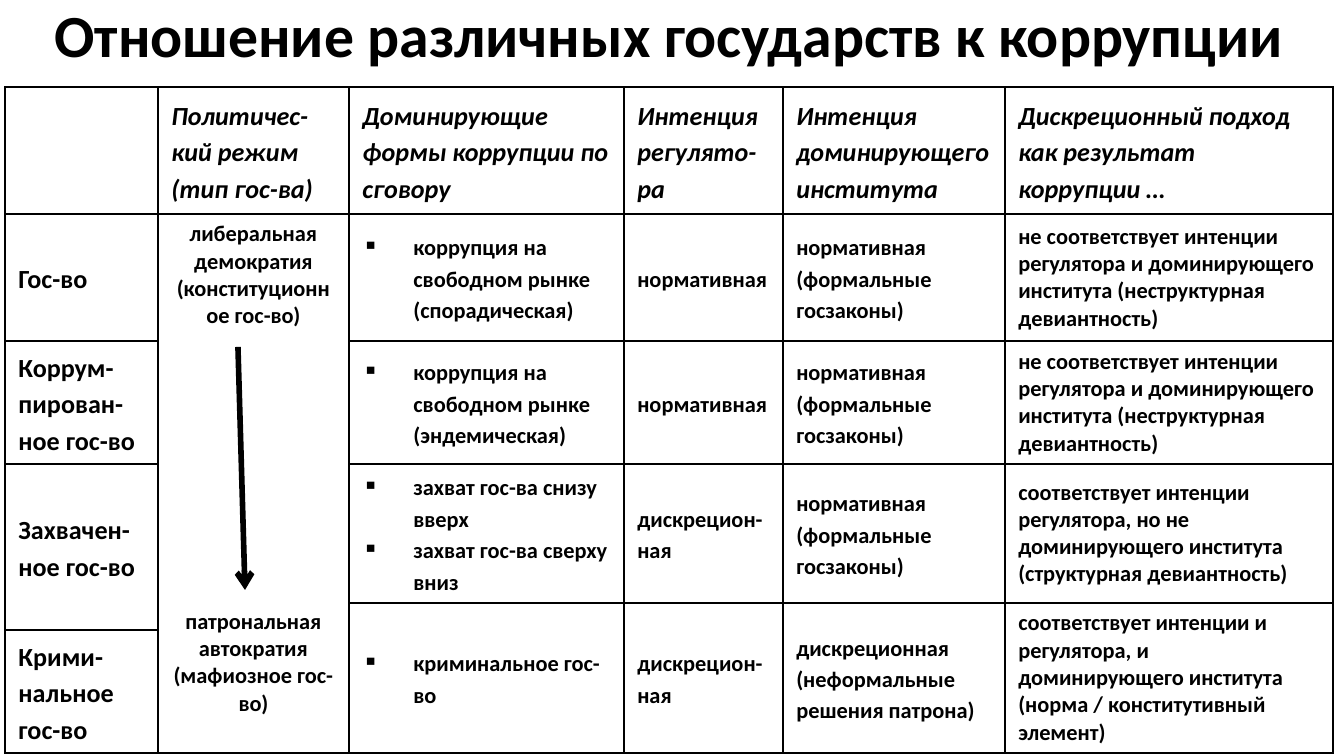
from lxml import etree
from pptx import Presentation
from pptx.dml.color import RGBColor
from pptx.enum.shapes import MSO_CONNECTOR
from pptx.enum.text import MSO_ANCHOR, PP_ALIGN
from pptx.oxml.ns import qn
from pptx.util import Emu, Pt

CENTER, LEFT = PP_ALIGN.CENTER, PP_ALIGN.LEFT
TOP, MIDDLE = MSO_ANCHOR.TOP, MSO_ANCHOR.MIDDLE
STRAIGHT = MSO_CONNECTOR.STRAIGHT

BLACK = RGBColor(0x00, 0x00, 0x00)
WHITE = RGBColor(0xFF, 0xFF, 0xFF)
FONT = "Calibri"
EMU_PER_PX = 914400 / 134.4

COLUMN_WIDTHS = [153, 191, 275, 159, 222, 328]
ROW_HEIGHTS = [127, 127, 123, 139, 27, 123]
REGIME_COLUMN, FORMS_COLUMN, APPROACH_COLUMN = 1, 2, 5
BULLET_INDENT = 51

HEADERS = [
    "",
    "Политичес-кий режим (тип гос-ва)",
    "Дoминирующие формы коррупции по сговору",
    "Интенция регулято-ра",
    "Интенция доминирующего института",
    "Дискреционный подход как результат коррупции …",
]
# Each state name with its first table row and the number of rows it spans
STATES = [
    ("Гос-во", 1, 1),
    ("Коррум-пирован-ное гос-во", 2, 1),
    ("Захвачен-ное гос-во", 3, 2),
    ("Крими-нальное гос-во", 5, 1),
]
REGIMES = [
    "либеральнaя дeмократия",
    "(конституционное гос-во)",
    "патрональная aвтократия",
    "(мaфиозное гос-во)",
]
NORMATIVE = "нормативная"
DISCRETIONARY = "дискрецион-ная"
FORMAL_LAWS = "нормативная (формальные госзаконы)"
NOT_MATCHING = (
    "не соответствует интенции регулятора и доминирующего института "
    "(неструктурная дeвиaнтнoсть)"
)
# Forms of corruption, regulator, dominant institution, discretionary approach
FEATURES = [
    ("коррупция на свободном рынке (спорадическая)",
     NORMATIVE, FORMAL_LAWS, NOT_MATCHING),
    ("коррупция на свободном рынке (эндемическая)",
     NORMATIVE, FORMAL_LAWS, NOT_MATCHING),
    ("захват гос-ва снизу вверх\nзахват гос-ва сверху вниз",
     DISCRETIONARY, FORMAL_LAWS,
     "соответствует интенции регулятора, но не доминирующего института "
     "(структурная дeвиaнтнoсть)"),
    ("криминальное гос-во",
     DISCRETIONARY, "дискреционная (неформальные решения патрона)",
     "соответствует интенции и регулятора, и доминирующего института "
     "(норма / конститутивный элемент)"),
]


def px(value):
    return Emu(round(value * EMU_PER_PX))


def write(frame, text, size, italic=False, align=LEFT, spacing=1.0):
    frame.text = text
    frame.word_wrap = True
    for paragraph in frame.paragraphs:
        paragraph.alignment = align
        paragraph.line_spacing = spacing
        for run in paragraph.runs:
            font = run.font
            font.name, font.size = FONT, Pt(size)
            font.bold, font.italic = True, italic
            font.color.rgb = BLACK


def add_bullets(frame):
    for paragraph in frame.paragraphs:
        properties = paragraph._p.get_or_add_pPr()
        properties.set("marL", str(px(BULLET_INDENT)))
        properties.set("indent", str(-px(BULLET_INDENT)))
        etree.SubElement(properties, qn("a:buChar"), char="▪")


def style_cell(cell):
    """Give the cell a thin black frame and a white fill."""
    properties = cell._tc.get_or_add_tcPr()
    for side in ("a:lnL", "a:lnR", "a:lnT", "a:lnB"):
        line = etree.SubElement(properties, qn(side), w=str(Pt(1)))
        fill = etree.SubElement(line, qn("a:solidFill"))
        etree.SubElement(fill, qn("a:srgbClr"), val=str(BLACK))
    cell.fill.solid()
    cell.fill.fore_color.rgb = WHITE
    cell.vertical_anchor = MIDDLE


def add_title(slide, text):
    box = slide.shapes.add_textbox(px(-5), px(8), px(1349), px(52))
    write(box.text_frame, text, 32, align=CENTER)
    box.text_frame.vertical_anchor = MIDDLE


def add_grid(slide):
    frame = slide.shapes.add_table(
        len(ROW_HEIGHTS), len(COLUMN_WIDTHS), px(5), px(87),
        px(sum(COLUMN_WIDTHS)), px(sum(ROW_HEIGHTS)))
    table = frame.table
    table.first_row = table.horz_banding = False
    for column, width in zip(table.columns, COLUMN_WIDTHS):
        column.width = px(width)
    for row, height in zip(table.rows, ROW_HEIGHTS):
        row.height = px(height)
    for cell in table.iter_cells():
        style_cell(cell)
    return table


def merge_down(table, row, column, span):
    cell = table.cell(row, column)
    if span > 1:
        cell.merge(table.cell(row + span - 1, column))
    return cell


def fill_regimes(table):
    cell = merge_down(table, 1, REGIME_COLUMN, len(ROW_HEIGHTS) - 1)
    cell.vertical_anchor = TOP
    write(cell.text_frame, "\n".join(REGIMES), 12, align=CENTER)
    cell.text_frame.paragraphs[2].space_before = Pt(149)


def fill_table(table):
    for column, header in enumerate(HEADERS):
        write(table.cell(0, column).text_frame, header, 14,
              italic=True, spacing=1.15)
    for name, row, span in STATES:
        cell = merge_down(table, row, 0, span)
        write(cell.text_frame, name, 14, spacing=1.15)
    fill_regimes(table)
    for row, features in enumerate(FEATURES, start=1):
        span = 2 if row == len(FEATURES) else 1
        for column, text in enumerate(features, start=FORMS_COLUMN):
            cell = merge_down(table, row, column, span)
            spacing = 1.0 if column == APPROACH_COLUMN else 1.15
            write(cell.text_frame, text, 12, spacing=spacing)
            if column == FORMS_COLUMN:
                add_bullets(cell.text_frame)


def add_arrow(slide, start, end):
    arrow = slide.shapes.add_connector(
        STRAIGHT, *(px(value) for value in start + end))
    arrow.line.color.rgb = BLACK
    arrow.line.width = Pt(3)
    etree.SubElement(arrow.line._get_or_add_ln(), qn("a:tailEnd"), type="arrow")
    etree.SubElement(arrow._element.spPr, qn("a:effectLst"))


def main():
    presentation = Presentation()
    presentation.slide_width = px(1344)
    presentation.slide_height = px(756)
    slide = presentation.slides.add_slide(presentation.slide_layouts[6])
    add_title(slide, "Отношение различных государств к коррупции")
    fill_table(add_grid(slide))
    add_arrow(slide, (238, 347), (245, 590))
    presentation.save("out.pptx")


if __name__ == "__main__":
    main()
